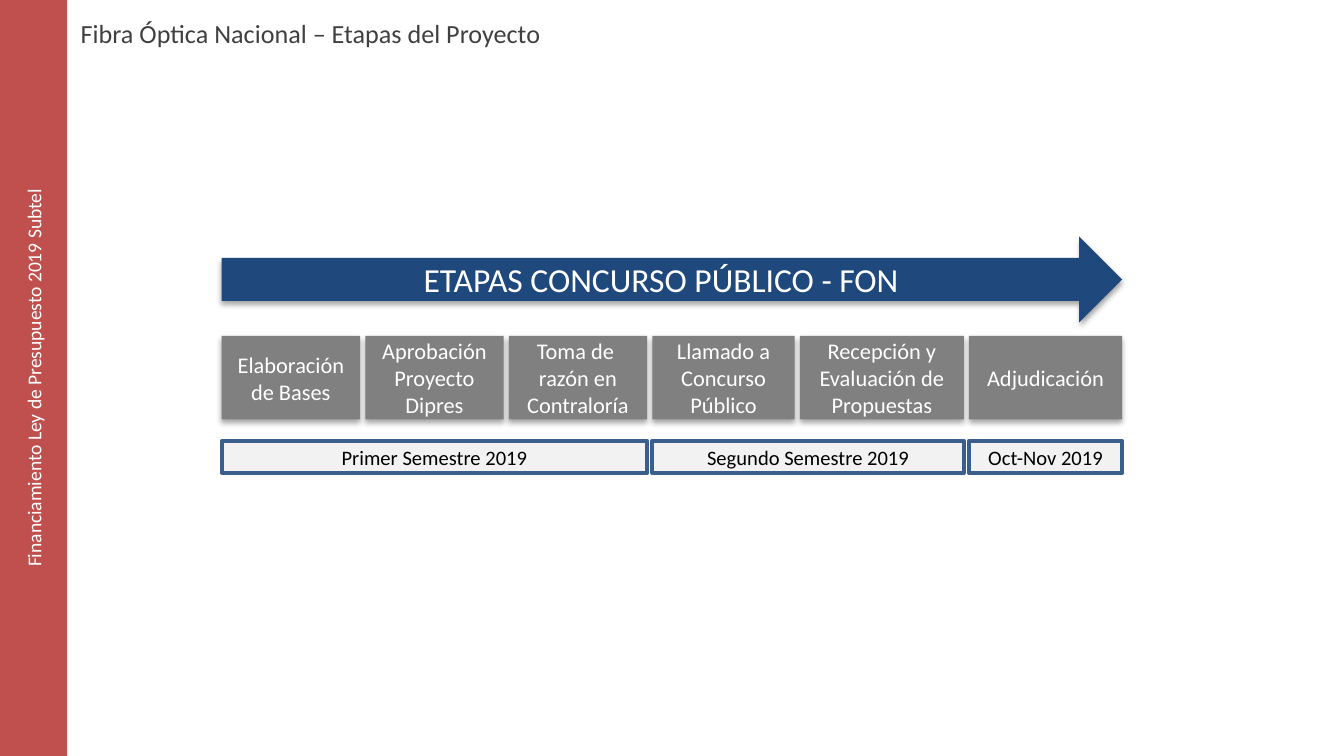
"""Build the slide with the stages of the national optical fibre tender."""
from lxml import etree
from pptx import Presentation
from pptx import util as u
from pptx.dml.color import RGBColor
from pptx.enum import shapes, text
from pptx.oxml.ns import qn

TITLE = "Fibra Óptica Nacional – Etapas del Proyecto"
SIDEBAR = "Financiamiento Ley de Presupuesto 2019 Subtel"
ARROW = "ETAPAS CONCURSO PÚBLICO - FON"
STAGES = [
    ("Elaboración de Bases", 1.03),
    ("Aprobación Proyecto Dipres", 1.03),
    ("Toma de  razón en Contraloría", 1.03),
    ("Llamado a Concurso Público", 1.06),
    ("Recepción y Evaluación de Propuestas", 1.22),
    ("Adjudicación", 1.14),
]
PERIODS = [
    ("Primer Semestre 2019", 0, 2),
    ("Segundo Semestre 2019", 3, 4),
    ("Oct-Nov 2019", 5, 5),
]
COLORS = {
    "arrow": "1F497D", "stage": "808080", "period": "F2F2F2", "border": "3A5F8C",
    "sidebar": "C0504D", "title": "404040", "white": "FFFFFF", "black": "000000",
}
WIDTH = 10
HEIGHT = WIDTH * 9 / 16
LEFT, SPAN, BAR = 1.65, 6.7, 0.5
GAP = (SPAN - sum(width for _, width in STAGES)) / (len(STAGES) - 1)


def color(name):
    return RGBColor.from_string(COLORS[name])


def write(s, content, size, font_color, align=text.PP_ALIGN.CENTER,
          anchor=text.MSO_ANCHOR.MIDDLE):
    tf = s.text_frame
    tf.word_wrap = True
    tf.auto_size = text.MSO_AUTO_SIZE.NONE
    tf.vertical_anchor = anchor
    p = tf.paragraphs[0]
    p.text = content
    p.alignment = align
    p.font.size = u.Pt(size)
    p.font.name = "Calibri"
    p.font.color.rgb = color(font_color)


def add_block(slide, box, content, size, fill, font_color="white",
              kind=shapes.MSO_SHAPE.RECTANGLE):
    s = slide.shapes.add_shape(kind, *map(u.Inches, box))
    s.shadow.inherit = False
    s.fill.solid()
    s.fill.fore_color.rgb = color(fill)
    s.line.fill.background()
    write(s, content, size, font_color)
    return s


def add_shadow(s):
    effects = s._element.spPr.find(qn("a:effectLst"))
    shadow = etree.SubElement(effects, qn("a:outerShdw"), blurRad=str(u.Pt(3.1)),
                              dist=str(u.Pt(1.8)), dir="5400000", rotWithShape="0")
    tint = etree.SubElement(shadow, qn("a:srgbClr"), val=COLORS["black"])
    etree.SubElement(tint, qn("a:alpha"), val="35000")


def main():
    prs = Presentation()
    prs.slide_width, prs.slide_height = u.Inches(WIDTH), u.Inches(HEIGHT)
    slide = prs.slides.add_slide(prs.slide_layouts[5])

    title = slide.shapes.title
    title.left, title.top = u.Inches(BAR), u.Inches(0.08)
    title.width, title.height = u.Inches(8.79), u.Inches(0.41)
    write(title, TITLE, 14, "title", text.PP_ALIGN.JUSTIFY, text.MSO_ANCHOR.TOP)

    columns, x = [], LEFT
    for _, width in STAGES:
        columns.append((x, x + width))
        x += width + GAP

    arrow = add_block(slide, (LEFT, 1.76, SPAN, 0.64), ARROW, 18,
                      "arrow", kind=shapes.MSO_SHAPE.RIGHT_ARROW)
    add_shadow(arrow)
    for (name, width), (start, _) in zip(STAGES, columns):
        add_shadow(add_block(slide, (start, 2.5, width, 0.62), name, 12, "stage"))

    for name, first, last in PERIODS:
        start, end = columns[first][0], columns[last][1]
        s = add_block(slide, (start, 3.28, end - start, 0.24), name, 11, "period", "black")
        s.line.color.rgb = color("border")
        s.line.width = u.Pt(2)

    sidebar = add_block(slide, (0, 0, BAR, HEIGHT), SIDEBAR, 10.5, "sidebar")
    sidebar.text_frame._txBody.bodyPr.set("vert", "vert270")

    prs.save("out.pptx")


if __name__ == "__main__":
    main()
